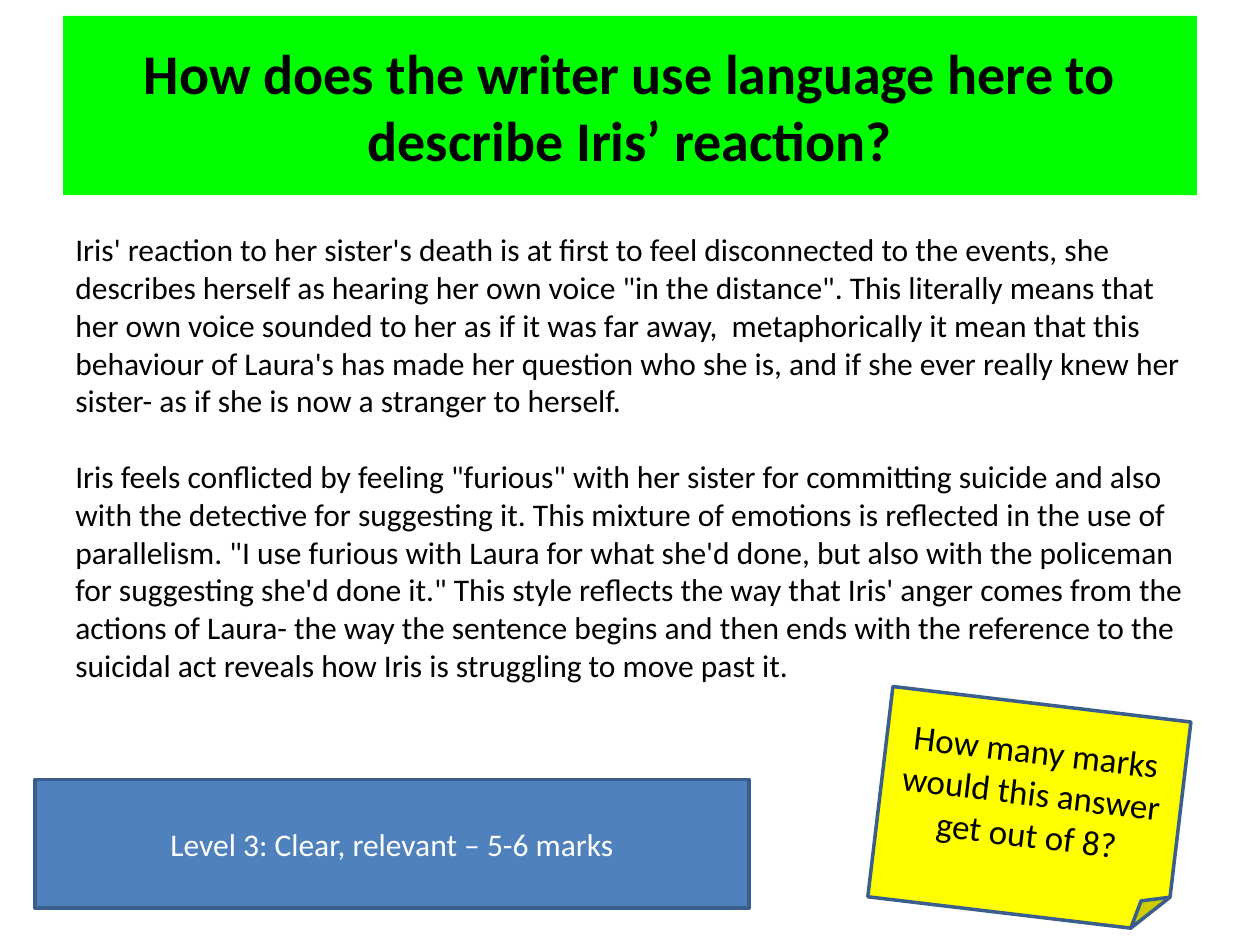
import pptx
import pptx.util
import pptx.dml.color
import pptx.enum.shapes
import pptx.enum.text

Pt = pptx.util.Pt
RGBColor = pptx.dml.color.RGBColor
SHAPE = pptx.enum.shapes.MSO_SHAPE
ALIGN = pptx.enum.text.PP_ALIGN
ANCHOR = pptx.enum.text.MSO_ANCHOR

GREEN = RGBColor(0x00, 0xFF, 0x00)
YELLOW = RGBColor(0xFF, 0xFF, 0x00)
BLUE = RGBColor(0x4F, 0x81, 0xBD)
DARK_BLUE = RGBColor(0x3A, 0x5F, 0x8C)
BLACK = RGBColor(0, 0, 0)
WHITE = RGBColor(0xFF, 0xFF, 0xFF)

# Content
TITLE = "How does the writer use language here to describe Iris’ reaction?"
ANSWER = [
    "Iris' reaction to her sister's death is at first to feel disconnected to the events, "
    "she describes herself as hearing her own voice \"in the distance\". This literally means "
    "that her own voice sounded to her as if it was far away,  metaphorically it mean that "
    "this behaviour of Laura's has made her question who she is, and if she ever really knew "
    "her sister- as if she is now a stranger to herself.",
    "Iris feels conflicted by feeling \"furious\" with her sister for committing suicide and "
    "also with the detective for suggesting it. This mixture of emotions is reflected in the "
    "use of parallelism. \"I use furious with Laura for what she'd done, but also with the "
    "policeman for suggesting she'd done it.\" This style reflects the way that Iris' anger "
    "comes from the actions of Laura- the way the sentence begins and then ends with the "
    "reference to the suicidal act reveals how Iris is struggling to move past it.",
]
# text, preset, (left, top, width, height), rotation, fill, font size, font colour
CALLOUTS = [
    ("How many marks would this answer get out of 8?", SHAPE.FOLDED_CORNER,
     (502.5, 402, 171.5, 121), 6.8, YELLOW, 20, BLACK),
    ("Level 3: Clear, relevant – 5-6 marks", SHAPE.RECTANGLE,
     (20, 445.5, 408, 73.5), 0, BLUE, 18, WHITE),
]
MARGIN, CONTENT_WIDTH = 36, 648


def write(tf, paragraphs, size, color, bold=False, align=ALIGN.LEFT,
          anchor=ANCHOR.TOP, gap=0):
    tf.word_wrap = True
    tf.vertical_anchor = anchor
    font_format = {"name": "Calibri", "size": Pt(size), "bold": bold}
    for i, text in enumerate(paragraphs):
        p = tf.add_paragraph() if i else tf.paragraphs[0]
        p.alignment = align
        p.space_before = Pt(gap if i else 0)
        r = p.add_run()
        r.text = text
        for name, value in font_format.items():
            setattr(r.font, name, value)
        r.font.color.rgb = color


prs = pptx.Presentation()
prs.slide_width, prs.slide_height = Pt(720), Pt(540)
s = prs.slides.add_slide(prs.slide_layouts[5])

# Title band
title = s.shapes.title
box = {"left": MARGIN, "top": 9, "width": CONTENT_WIDTH, "height": 102.5}
for name, value in box.items():
    setattr(title, name, Pt(value))
title.fill.solid()
title.fill.fore_color.rgb = GREEN
write(title.text_frame, [TITLE], 32, BLACK, bold=True, align=ALIGN.CENTER,
      anchor=ANCHOR.MIDDLE)

# Sample answer, paragraphs one line apart
sp = s.shapes.add_textbox(Pt(MARGIN), Pt(128), Pt(CONTENT_WIDTH), Pt(269))
write(sp.text_frame, ANSWER, 18, BLACK, gap=21.6)

# Question note and mark band
for text, preset, place, rotation, fill, size, color in CALLOUTS:
    sp = s.shapes.add_shape(preset, *map(Pt, place))
    sp.rotation = rotation
    sp.shadow.inherit = False
    sp.fill.solid()
    sp.fill.fore_color.rgb = fill
    sp.line.color.rgb = DARK_BLUE
    sp.line.width = Pt(2)
    write(sp.text_frame, [text], size, color, align=ALIGN.CENTER, anchor=ANCHOR.MIDDLE)

prs.save("out.pptx")
